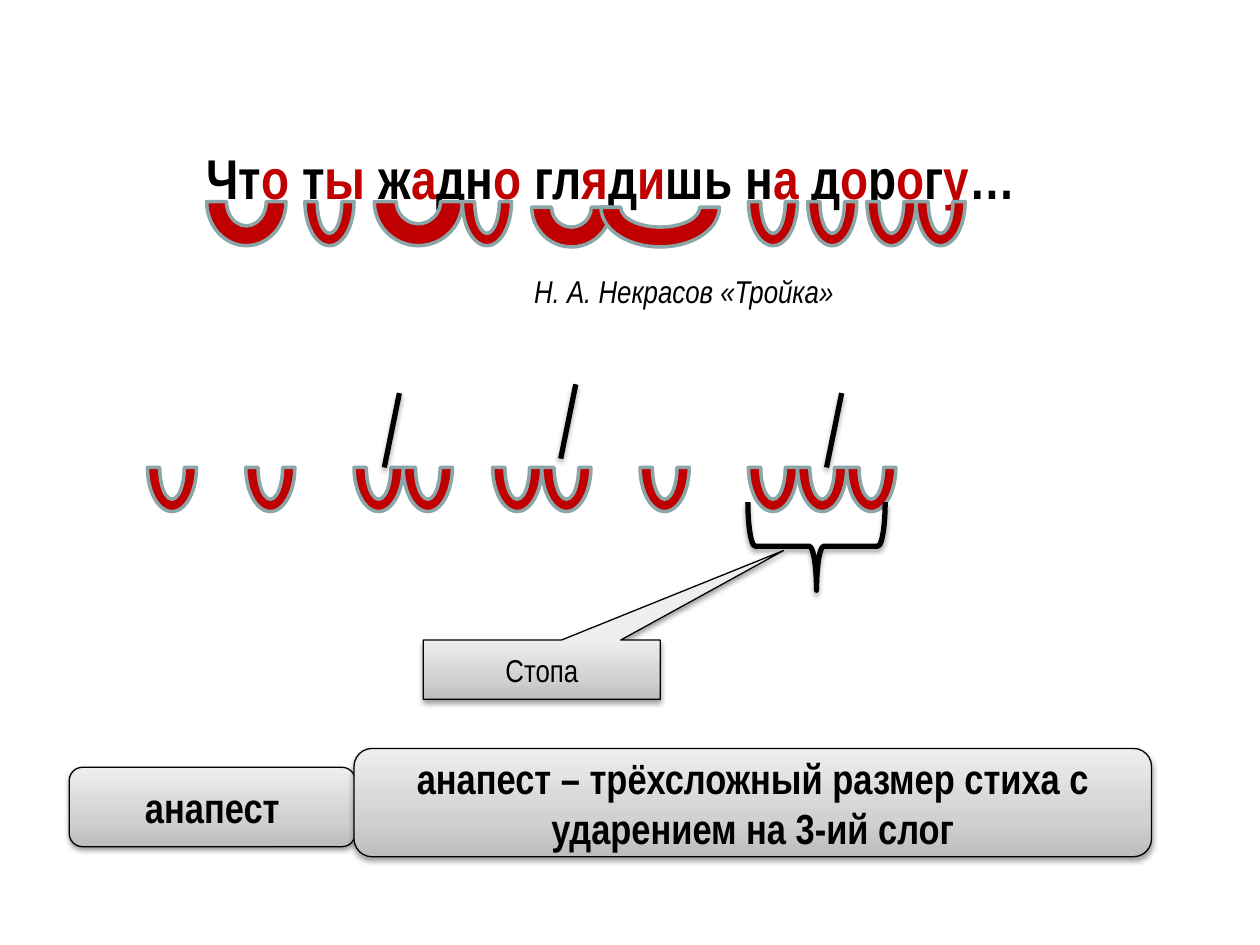
from copy import deepcopy
from lxml import etree
from pptx import Presentation, util as u
from pptx.dml.color import RGBColor
from pptx.enum import shapes, text
from pptx.oxml import ns

HUES = {"ink": "000000", "red": "C00000", "edge": "8AA6A8",
        "dark": "BDBDBD", "mid": "D1D1D1", "pale": "EEEEEE"}
RGB = {name: RGBColor.from_string(code) for name, code in HUES.items()}
KIND = shapes.MSO_SHAPE

deck = Presentation()
deck.slide_width, deck.slide_height = u.Inches(10), u.Inches(7.5)
slide = deck.slides.add_slide(deck.slide_layouts[6])
items = slide.shapes


def write(frame, runs, align, form):
    frame.word_wrap = True
    para = frame.paragraphs[0]
    para.alignment = align
    for words, hue in runs:
        run = para.add_run()
        run.text = words
        for key, value in {"name": "Arial Narrow", **form}.items():
            setattr(run.font, key, value)
        run.font.color.rgb = RGB[hue]


def shade(item, alpha, dist):
    props = item._element.spPr
    for old in props.findall(ns.qn("a:effectLst")):
        props.remove(old)
    glow = etree.SubElement(props, ns.qn("a:effectLst"))
    cast = etree.SubElement(glow, ns.qn("a:outerShdw"), blurRad=str(u.Pt(3.1)),
                            dist=str(u.Pt(dist)), dir="5400000", rotWithShape="0")
    tint = etree.SubElement(cast, ns.qn("a:srgbClr"), val=HUES["ink"])
    etree.SubElement(tint, ns.qn("a:alpha"), val=str(alpha * 1000))


verse = "Чт|о |т|ы| ж|а|дн|о| гл|я|д|и|шь н|а| д|о|р|о|г|у|…".split("|")
verse = [(part, ("ink", "red")[i % 2]) for i, part in enumerate(verse)]
author = [("Н. А. Некрасов «Тройка»", "ink")]
for box, runs, align, form in [
    ((4.14, 2.11, 4.61, 0.4), author, text.PP_ALIGN.LEFT, {"size": u.Pt(18), "italic": True}),
    ((1.02, 1.09, 7.66, 0.64), verse, text.PP_ALIGN.CENTER, {"size": u.Pt(32), "bold": True}),
]:
    label = items.add_textbox(*map(u.Inches, box))
    write(label.text_frame, runs, align, form)

slim = 0.39
rows = [
    (1.25, 0.7, [(1.64, 0.63), (2.42, slim), (2.97, 0.7), (3.67, slim)]),
    (1.33, 0.63, [(4.22, 0.63), (4.77, 0.94)]),
    (1.25, 0.7, [(x, slim) for x in (5.94, 6.41, 6.88, 7.27)]),
    (3.36, 0.7, [(x, slim) for x in (1.17, 1.95, 2.81, 3.2, 3.91, 4.3,
                                     5.08, 5.94, 6.33, 6.72)]),
]
for top, height, arcs in rows:
    for left, width in arcs:
        arc = items.add_shape(KIND.BLOCK_ARC, *map(u.Inches, (left, top, width, height)))
        arc.rotation = 180
        arc.shadow.inherit = False
        arc.fill.solid()
        arc.fill.fore_color.rgb = RGB["red"]
        arc.line.color.rgb = RGB["edge"]
        arc.line.width = u.Pt(2)

for left, top in [(3.05, 3.12), (4.45, 3.05), (6.56, 3.12)]:
    ends = map(u.Inches, (left + 0.12, top, left, top + 0.59))
    stress = items.add_connector(shapes.MSO_CONNECTOR.STRAIGHT, *ends)
    stress.line.color.rgb = RGB["ink"]
    stress.line.width = u.Pt(3)
    shade(stress, 35, 1.8)

brace = items.add_shape(KIND.RIGHT_BRACE, *map(u.Inches, (6.13, 3.79, 0.7, 1.09)))
brace.rotation = 90
brace.fill.background()
brace.line.color.rgb = RGB["ink"]
brace.line.width = u.Pt(3)
shade(brace, 35, 1.8)

term = {"size": u.Pt(24), "bold": True}
for kind, box, words, form in [
    (KIND.RECTANGULAR_CALLOUT, (3.36, 5.08, 1.88, 0.47), "Стопа", {"size": u.Pt(18)}),
    (KIND.ROUNDED_RECTANGLE, (0.55, 6.09, 2.27, 0.63), "анапест", term),
    (KIND.ROUNDED_RECTANGLE, (2.81, 5.94, 6.33, 0.86),
     "анапест – трёхсложный размер стиха с ударением на 3-ий слог", term),
]:
    card = items.add_shape(kind, *map(u.Inches, box))
    if kind == KIND.RECTANGULAR_CALLOUT:
        card.adjustments[0], card.adjustments[1] = 1.02, -2.01
    card.fill.gradient()
    card.fill.gradient_angle = 90
    stops = card._element.spPr.find(".//" + ns.qn("a:gsLst"))
    stops.append(deepcopy(stops[-1]))
    for stop, (place, hue) in zip(card.fill.gradient_stops,
                                  [(0, "dark"), (0.35, "mid"), (1, "pale")]):
        stop.position = place
        stop.color.rgb = RGB[hue]
    card.line.color.rgb = RGB["ink"]
    card.line.width = u.Pt(0.75)
    shade(card, 38, 1.6)
    card.text_frame.vertical_anchor = text.MSO_ANCHOR.MIDDLE
    write(card.text_frame, [(words, "ink")], text.PP_ALIGN.CENTER, form)

deck.save("out.pptx")
